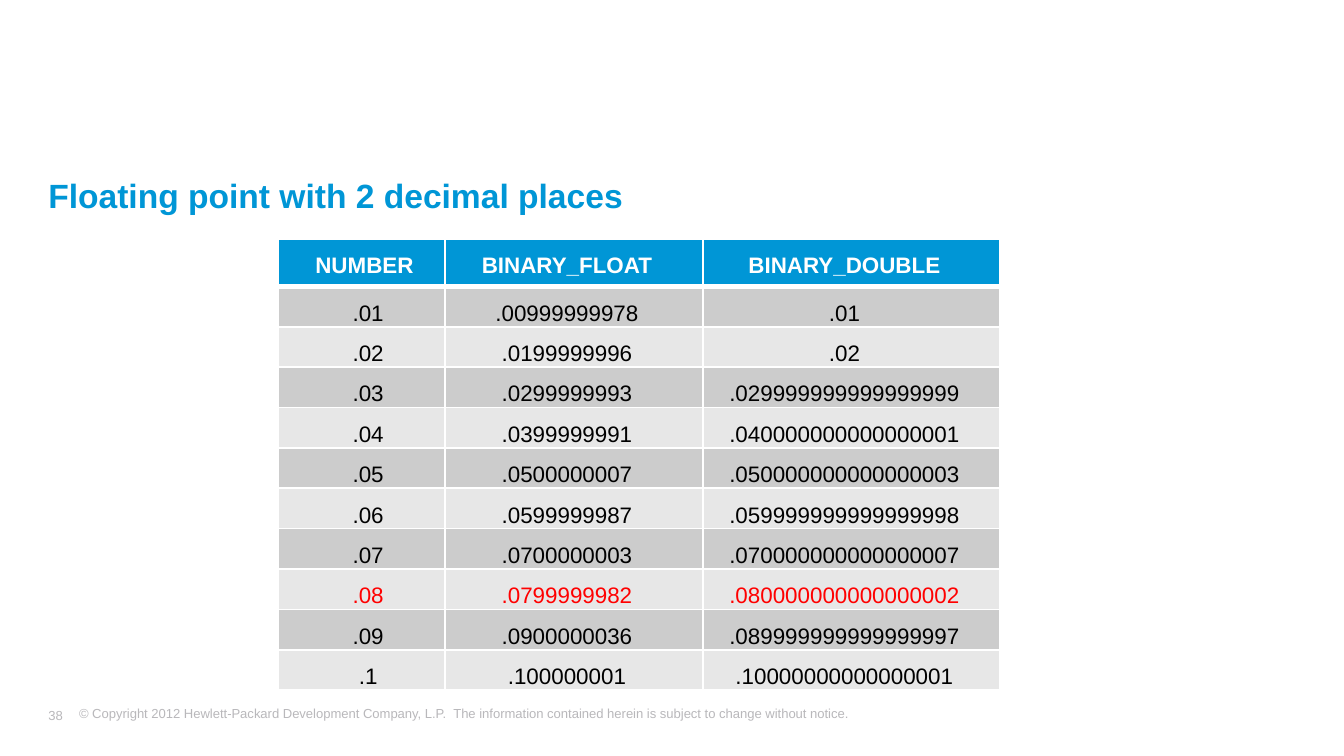
import pptx
import pptx.dml.color
import pptx.enum.text
import pptx.oxml
import pptx.oxml.ns
import pptx.util

Pt = pptx.util.Pt
ANCHOR = pptx.enum.text.MSO_ANCHOR
ALIGN = pptx.enum.text.PP_ALIGN

COLORS = {
    "blue": "0096D6",
    "white": "FFFFFF",
    "black": "000000",
    "red": "FF0000",
    "dark_band": "CCCCCC",
    "light_band": "E7E7E7",
    "footer": "B9B8BB",
}
HEADERS = ("NUMBER", "BINARY_FLOAT", "BINARY_DOUBLE")
VALUES = (
    (".01", ".00999999978", ".01"),
    (".02", ".0199999996", ".02"),
    (".03", ".0299999993", ".029999999999999999"),
    (".04", ".0399999991", ".040000000000000001"),
    (".05", ".0500000007", ".050000000000000003"),
    (".06", ".0599999987", ".059999999999999998"),
    (".07", ".0700000003", ".070000000000000007"),
    (".08", ".0799999982", ".080000000000000002"),
    (".09", ".0900000036", ".089999999999999997"),
    (".1", ".100000001", ".10000000000000001"),
)
HIGHLIGHTED = ".08"
COLUMN_WIDTHS = (89.3, 138.2, 159.1)
HEADER_HEIGHT, ROW_HEIGHT = 23.7, 20.7


def rgb(name):
    return pptx.dml.color.RGBColor.from_string(COLORS[name])


def write_text(frame, text, *, size, color, bold=False, align=ALIGN.LEFT, after=0):
    para = frame.paragraphs[0]
    para.alignment = align
    para.space_after = Pt(after)
    span = para.add_run()
    span.text = text
    span.font.name = "Arial"
    span.font.size = Pt(size)
    span.font.bold = bold
    span.font.color.rgb = rgb(color)


def set_margins(target, margins):
    sides = ("left", "top", "right", "bottom")
    for side, margin in zip(sides, margins):
        setattr(target, f"margin_{side}", Pt(margin))


def add_text(page, text, left, top, width, height, *, margins=(0, 0, 0, 0),
             wrap=True, anchor=ANCHOR.TOP, **text_format):
    box = page.shapes.add_textbox(Pt(left), Pt(top), Pt(width), Pt(height))
    frame = box.text_frame
    frame.word_wrap = wrap
    frame.vertical_anchor = anchor
    set_margins(frame, margins)
    write_text(frame, text, **text_format)


def set_borders(cell, color, widths):
    properties = cell._tc.get_or_add_tcPr()
    namespace = pptx.oxml.ns.nsdecls("a")
    for index, (side, width) in enumerate(zip("LRTB", widths)):
        line = pptx.oxml.parse_xml(
            f'<a:ln{side} {namespace} w="{Pt(width)}"><a:solidFill>'
            f'<a:srgbClr val="{COLORS[color]}"/></a:solidFill></a:ln{side}>')
        properties.insert(index, line)


def format_cell(cell, text, *, fill, margins, borders, anchor=ANCHOR.TOP, **text_format):
    cell.fill.solid()
    cell.fill.fore_color.rgb = rgb(fill)
    cell.vertical_anchor = anchor
    set_margins(cell, margins)
    set_borders(cell, "white", borders)
    write_text(cell.text_frame, text, size=12, align=ALIGN.CENTER, **text_format)


def add_number_table(page, left, top):
    height = HEADER_HEIGHT + ROW_HEIGHT * len(VALUES)
    table = page.shapes.add_table(
        len(VALUES) + 1, len(HEADERS), Pt(left), Pt(top),
        Pt(sum(COLUMN_WIDTHS)), Pt(height)).table
    for column, width in zip(table.columns, COLUMN_WIDTHS):
        column.width = Pt(width)
    for index, row in enumerate(table.rows):
        row.height = Pt(ROW_HEIGHT if index else HEADER_HEIGHT)

    for column, text in enumerate(HEADERS):
        margins = (7.2, 7.2, 14.4, 3.6) if column else (10.5, 7.2, 7.2, 3.6)
        format_cell(table.cell(0, column), text, fill="blue", margins=margins,
                    borders=(1, 1, 1, 3), color="white", bold=True)

    for row, values in enumerate(VALUES, start=1):
        fill = "dark_band" if row % 2 else "light_band"
        color = "red" if values[0] == HIGHLIGHTED else "black"
        for column, text in enumerate(values):
            format_cell(table.cell(row, column), text, fill=fill,
                        margins=(7.2, 7.2, 14.4 if column else 0, 0),
                        borders=(1, 1, 3 if row == 1 else 1, 1),
                        anchor=ANCHOR.MIDDLE, color=color)


def main():
    deck = pptx.Presentation()
    deck.slide_width, deck.slide_height = Pt(720), Pt(405)
    page = deck.slides.add_slide(deck.slide_layouts[6])
    add_text(page, "© Copyright 2012 Hewlett-Packard Development Company, L.P.  "
             "The information contained herein is subject to change without notice.",
             35.3, 374.4, 630.7, 18, margins=(7.2, 3.6, 7.2, 3.6),
             size=7, color="footer")
    add_text(page, "38", 25.9, 377.3, 25.2, 11.5, margins=(0, 3.6, 7.2, 3.6),
             wrap=False, anchor=ANCHOR.MIDDLE, size=7, color="footer")
    add_text(page, "Floating point with 2 decimal places", 25.9, 93.6, 639.4, 253.4,
             size=18, color="blue", bold=True, after=4)
    add_number_table(page, 149, 128.2)
    deck.save("out.pptx")


if __name__ == "__main__":
    main()
